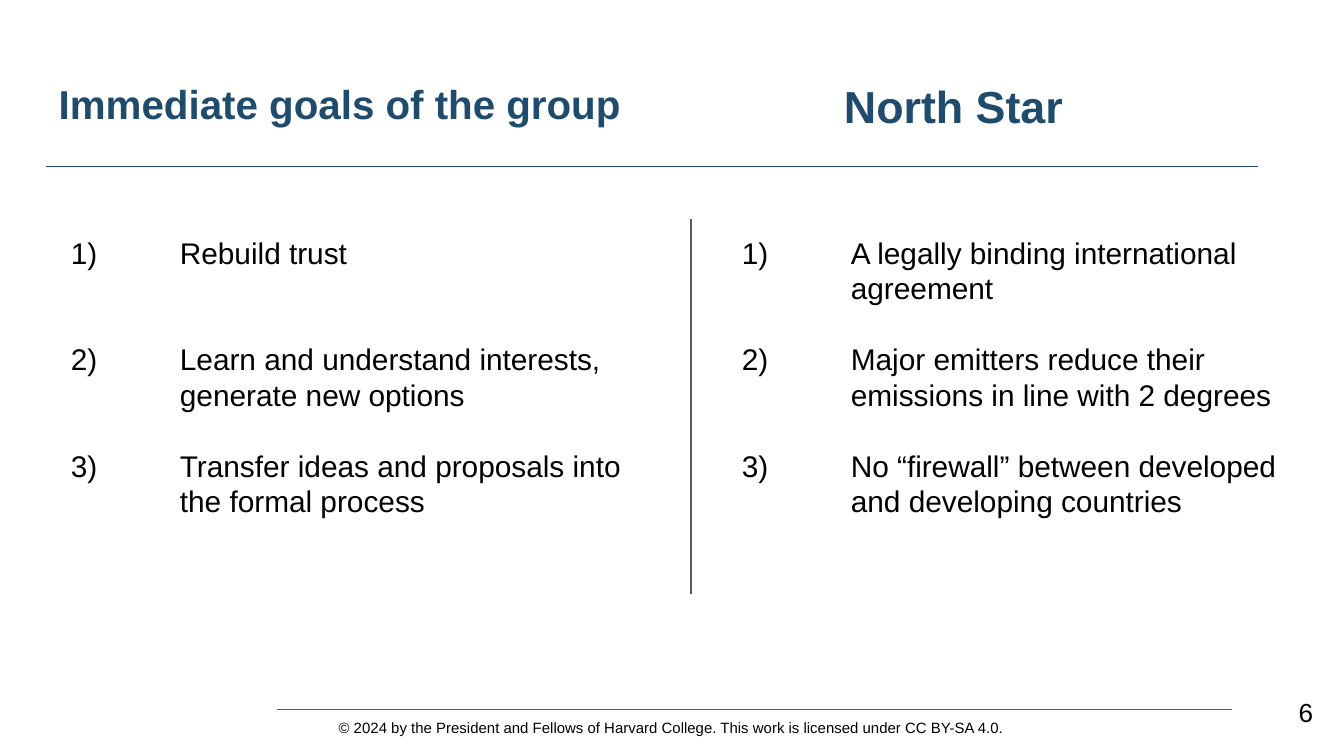
import pptx
import pptx.dml.color
import pptx.enum.shapes
import pptx.enum.text
import pptx.oxml.ns
import pptx.util
from lxml import etree

Cm = pptx.util.Cm
Pt = pptx.util.Pt
Align = pptx.enum.text.PP_ALIGN
Anchor = pptx.enum.text.MSO_ANCHOR

COLORS = {"heading": "1F4C6D", "text": "000000", "rule": "595959"}
INSET = 0.25
LINE_HEIGHT = 19  # points, one line of the goal lists

GOALS = [
    "Rebuild trust",
    "Learn and understand interests, generate new options",
    "Transfer ideas and proposals into the formal process",
]
NORTH_STAR = [
    "A legally binding international agreement",
    "Major emitters reduce their emissions in line with 2 degrees",
    "No “firewall” between developed and developing countries",
]
COPYRIGHT = (
    "© 2024 by the President and Fellows of Harvard College. "
    "This work is licensed under CC BY-SA 4.0."
)


def rgb(name):
    return pptx.dml.color.RGBColor.from_string(COLORS[name])


def place(shape, left, top, width, height):
    shape.left, shape.top = Cm(left), Cm(top)
    shape.width, shape.height = Cm(width), Cm(height)


def set_frame(shape, anchor=Anchor.TOP, inset=INSET):
    frame = shape.text_frame
    frame.word_wrap = True
    frame.auto_size = pptx.enum.text.MSO_AUTO_SIZE.NONE
    frame.vertical_anchor = anchor
    frame.margin_left = frame.margin_right = Cm(inset)
    frame.margin_top = frame.margin_bottom = Cm(min(inset, INSET))
    return frame


def style(paragraph, size, color="text", bold=False, align=Align.LEFT):
    paragraph.alignment = align
    font = paragraph.font
    font.name, font.size, font.bold = "Arial", Pt(size), bold
    font.color.rgb = rgb(color)


def fill_heading(shape, text, size):
    paragraph = set_frame(shape).paragraphs[0]
    paragraph.text = text
    style(paragraph, size, "heading", bold=True)


def add_number(paragraph):
    """Number the paragraph as 1), 2), 3) with a hanging indent."""
    properties = paragraph._p.get_or_add_pPr()
    properties.set("marL", str(Cm(2.06)))
    properties.set("indent", str(-Cm(2.06)))
    number = etree.SubElement(properties, pptx.oxml.ns.qn("a:buAutoNum"))
    number.set("type", "arabicParenR")


def fill_list(shape, items, gaps):
    """Write a numbered list; gaps holds the empty lines after each item."""
    frame = set_frame(shape)
    for index, (item, gap) in enumerate(zip(items, gaps)):
        paragraph = frame.add_paragraph() if index else frame.paragraphs[0]
        paragraph.text = item
        add_number(paragraph)
        paragraph.line_spacing = Pt(LINE_HEIGHT)
        paragraph.space_before = Pt(0)
        paragraph.space_after = Pt(gap * LINE_HEIGHT)
        style(paragraph, 16)


def add_textbox(slide, left, top, width, height):
    return slide.shapes.add_textbox(Cm(left), Cm(top), Cm(width), Cm(height))


def add_rule(slide, x1, y1, x2, y2, color="rule"):
    line = slide.shapes.add_connector(
        pptx.enum.shapes.MSO_CONNECTOR.STRAIGHT, Cm(x1), Cm(y1), Cm(x2), Cm(y2)
    )
    line.line.color.rgb = rgb(color)
    line.line.width = Pt(0.75)
    etree.SubElement(line._element.spPr, pptx.oxml.ns.qn("a:effectLst"))


def add_footer(slide):
    for left in (5.56, 5.23):
        add_rule(slide, left, 13.41, left + 17.73, 13.41)

    box = add_textbox(slide, 6.15, 13.46, 17.15, 0.61)
    paragraph = set_frame(box).paragraphs[0]
    box.text_frame.margin_top = box.text_frame.margin_bottom = Cm(0.13)
    paragraph.text = COPYRIGHT
    style(paragraph, 8)

    box = add_textbox(slide, 23.55, 12.95, 1.52, 1.09)
    paragraph = set_frame(box, Anchor.MIDDLE).paragraphs[0]
    paragraph.text = "6"
    paragraph.line_spacing = 0.9
    style(paragraph, 14, align=Align.RIGHT)


def main():
    presentation = pptx.Presentation()
    presentation.slide_width, presentation.slide_height = Cm(25.4), Cm(14.29)
    two_content = presentation.slide_layouts.get_by_name("Two Content")
    slide = presentation.slides.add_slide(two_content)
    title, goals, north_star = slide.placeholders

    place(title, 0.86, 1.24, 12.19, 1.6)
    fill_heading(title, "Immediate goals of the group", 21.6)
    fill_heading(add_textbox(slide, 15.7, 1.24, 9.55, 1.6), "North Star", 24)
    add_rule(slide, 0.86, 3.15, 23.77, 3.15, "heading")

    place(goals, 1.09, 4.19, 11.28, 5.99)
    fill_list(goals, GOALS, gaps=(2, 1, 0))
    place(north_star, 13.77, 4.19, 11.28, 5.99)
    fill_list(north_star, NORTH_STAR, gaps=(1, 1, 0))
    add_rule(slide, 13.06, 4.14, 13.06, 11.23)

    add_footer(slide)


    presentation.save("out.pptx")


if __name__ == "__main__":
    main()
